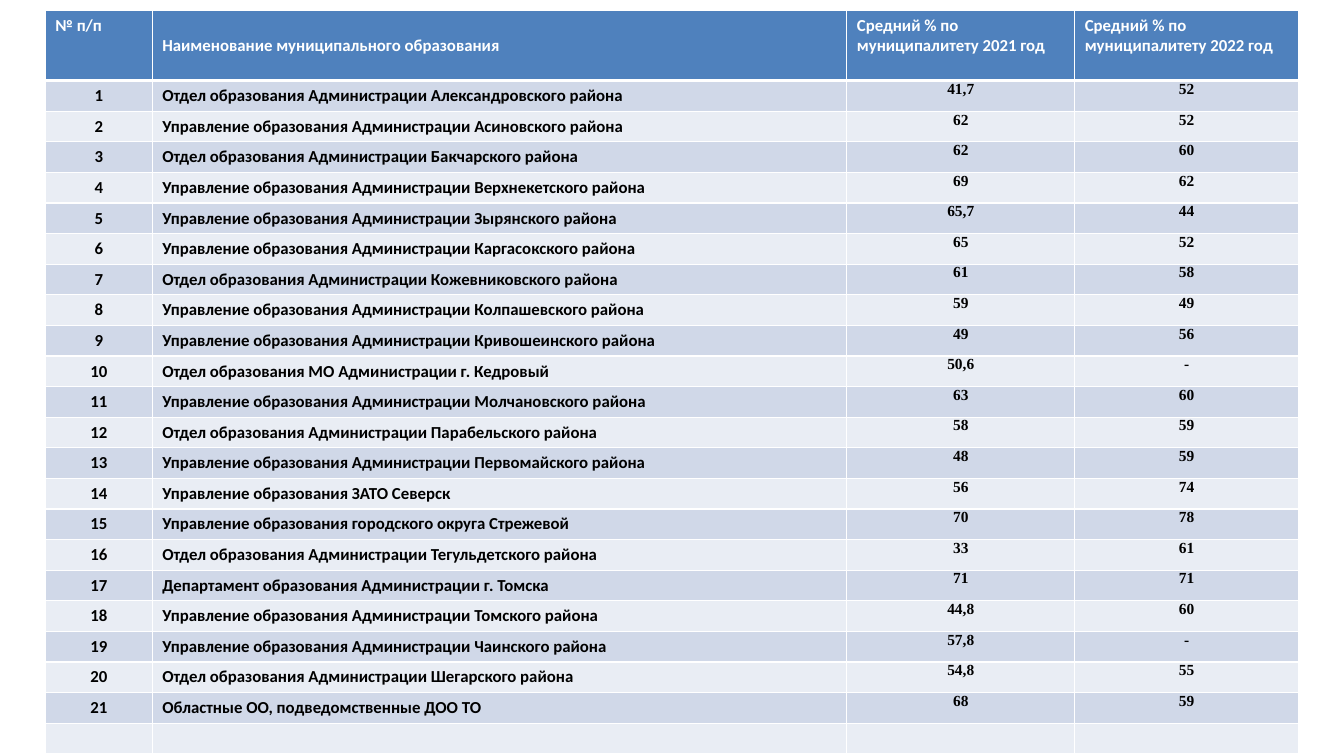
from typing import NamedTuple

from lxml.etree import SubElement
from pptx import Presentation
from pptx.dml.color import RGBColor
from pptx.enum.text import MSO_ANCHOR, PP_ALIGN
from pptx.oxml.ns import qn
from pptx.util import Inches, Pt

WHITE = RGBColor(0xFF, 0xFF, 0xFF)
BLACK = RGBColor(0x00, 0x00, 0x00)
HEADER_BLUE = RGBColor(0x4F, 0x81, 0xBD)
BAND_DARK = RGBColor(0xD0, 0xD8, 0xE8)
BAND_LIGHT = RGBColor(0xE9, 0xED, 0xF4)

COLUMN_WIDTHS = (1.06, 6.89, 2.26, 2.22)
HEADER_HEIGHT = 0.7
ROW_HEIGHT = 0.3


class TextStyle(NamedTuple):
    font: str
    size: int
    color: RGBColor
    align: PP_ALIGN = PP_ALIGN.LEFT
    side_margin: float = 0.1
    top_margin: float = 0.05


class Municipality(NamedTuple):
    name: str
    percent_2021: str
    percent_2022: str


HEADER_STYLE = TextStyle("Calibri", 12, WHITE)
NUMBER_STYLE = TextStyle("Calibri", 12, BLACK, PP_ALIGN.CENTER)
NAME_STYLE = TextStyle("Calibri", 12, BLACK)
PERCENT_STYLE = TextStyle("Times New Roman", 11, BLACK, PP_ALIGN.CENTER, 0.07, 0)
ROW_STYLES = (NUMBER_STYLE, NAME_STYLE, PERCENT_STYLE, PERCENT_STYLE)

HEADERS = (
    "№ п/п",
    "Наименование муниципального образования",
    "Средний % по муниципалитету 2021 год",
    "Средний % по муниципалитету 2022 год",
)
MUNICIPALITIES = (
    Municipality("Отдел образования Администрации Александровского района", "41,7", "52"),
    Municipality("Управление образования Администрации Асиновского района", "62", "52"),
    Municipality("Отдел образования Администрации Бакчарского района", "62", "60"),
    Municipality("Управление образования Администрации Верхнекетского района", "69", "62"),
    Municipality("Управление образования Администрации Зырянского района", "65,7", "44"),
    Municipality("Управление образования Администрации Каргасокского района", "65", "52"),
    Municipality("Отдел образования Администрации Кожевниковского района", "61", "58"),
    Municipality("Управление образования Администрации Колпашевского района", "59", "49"),
    Municipality("Управление образования Администрации Кривошеинского района", "49", "56"),
    Municipality("Отдел образования МО Администрации г. Кедровый", "50,6", "-"),
    Municipality("Управление образования Администрации Молчановского района", "63", "60"),
    Municipality("Отдел образования Администрации Парабельского района", "58", "59"),
    Municipality("Управление образования Администрации Первомайского района", "48", "59"),
    Municipality("Управление образования ЗАТО Северск", "56", "74"),
    Municipality("Управление образования городского округа Стрежевой", "70", "78"),
    Municipality("Отдел образования Администрации Тегульдетского района", "33", "61"),
    Municipality("Департамент образования Администрации г. Томска", "71", "71"),
    Municipality("Управление образования Администрации Томского района", "44,8", "60"),
    Municipality("Управление образования Администрации Чаинского района", "57,8", "-"),
    Municipality("Отдел образования Администрации Шегарского района", "54,8", "55"),
    Municipality("Областные ОО, подведомственные ДОО ТО", "68", "59"),
)


def add_borders(cell, bottom_width: int) -> None:
    properties = cell._tc.get_or_add_tcPr()
    for side, width in (("L", 1), ("R", 1), ("T", 1), ("B", bottom_width)):
        line = SubElement(properties, qn(f"a:ln{side}"), w=str(Pt(width)))
        fill = SubElement(line, qn("a:solidFill"))
        SubElement(fill, qn("a:srgbClr"), val=str(WHITE))


def fill_cell(cell, text: str, style: TextStyle, background: RGBColor,
              bottom_border: int = 1) -> None:
    add_borders(cell, bottom_border)
    cell.fill.solid()
    cell.fill.fore_color.rgb = background
    cell.margin_left = cell.margin_right = Inches(style.side_margin)
    cell.margin_top = cell.margin_bottom = Inches(style.top_margin)
    paragraph = cell.text_frame.paragraphs[0]
    paragraph.text = text
    paragraph.alignment = style.align
    for run in paragraph.runs:
        run.font.name = style.font
        run.font.size = Pt(style.size)
        run.font.bold = True
        run.font.color.rgb = style.color
    if not text:
        # An empty cell keeps its row low only with an explicit text size.
        SubElement(paragraph._p, qn("a:endParaRPr"), sz=str(style.size * 100))


def add_results_table(slide) -> None:
    rows = [(str(number), *municipality)
            for number, municipality in enumerate(MUNICIPALITIES, start=1)]
    rows.append(("",) * len(HEADERS))
    table = slide.shapes.add_table(
        len(rows) + 1, len(HEADERS), Inches(0.45), Inches(0.1),
        Inches(sum(COLUMN_WIDTHS)), Inches(HEADER_HEIGHT + ROW_HEIGHT * len(rows)),
    ).table
    for column, width in zip(table.columns, COLUMN_WIDTHS):
        column.width = Inches(width)
    for row in table.rows:
        row.height = Inches(ROW_HEIGHT)
    table.rows[0].height = Inches(HEADER_HEIGHT)

    for column_index, header in enumerate(HEADERS):
        fill_cell(table.cell(0, column_index), header, HEADER_STYLE, HEADER_BLUE, 3)
    table.cell(0, 1).vertical_anchor = MSO_ANCHOR.MIDDLE

    for row_index, texts in enumerate(rows, start=1):
        band = BAND_DARK if row_index % 2 else BAND_LIGHT
        for column_index, (text, style) in enumerate(zip(texts, ROW_STYLES)):
            fill_cell(table.cell(row_index, column_index), text, style, band)


def main() -> None:
    presentation = Presentation()
    presentation.slide_width = Inches(13.33)
    presentation.slide_height = Inches(7.5)
    slide = presentation.slides.add_slide(presentation.slide_layouts[6])
    add_results_table(slide)
    presentation.save("out.pptx")


if __name__ == "__main__":
    main()
